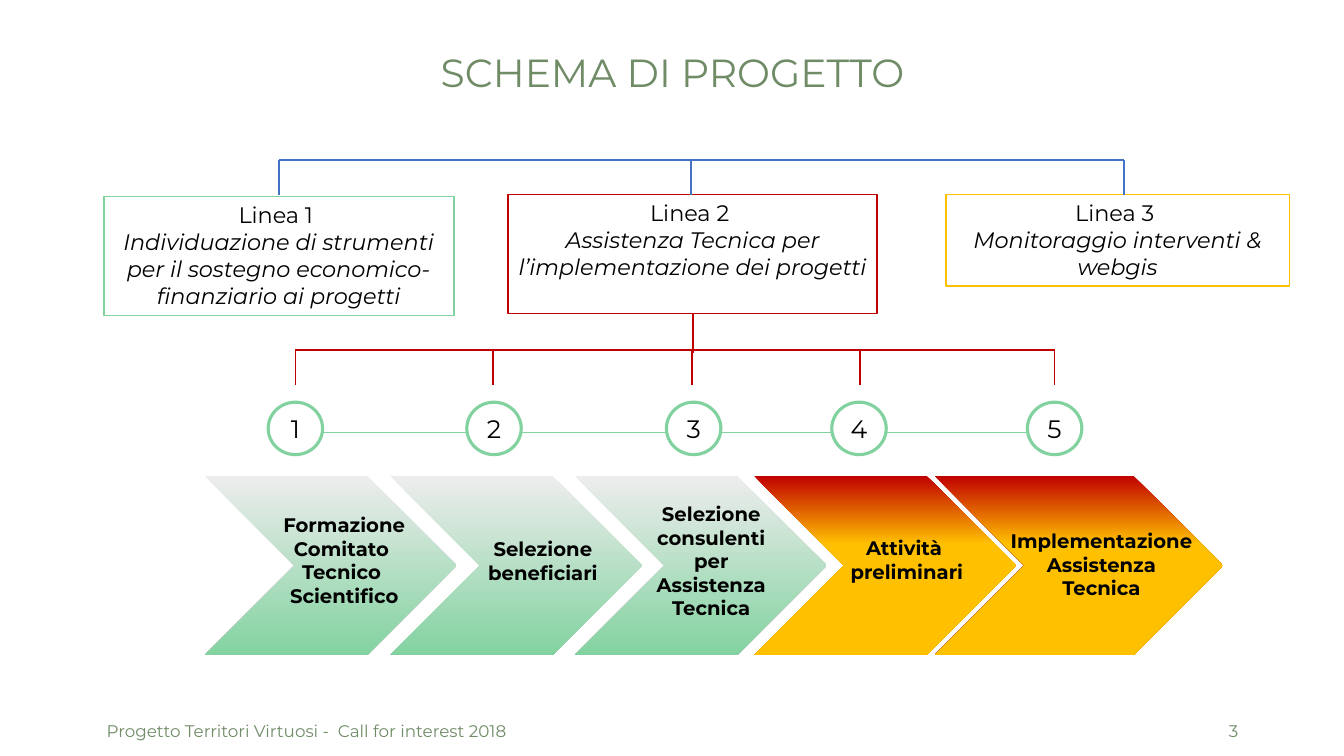
"""Build the project scheme slide: three lines of work and five stages."""
from dataclasses import dataclass

from lxml.etree import SubElement
from pptx import Presentation
from pptx.dml.color import RGBColor
from pptx.enum.shapes import MSO_CONNECTOR, MSO_SHAPE
from pptx.enum.text import MSO_ANCHOR, PP_ALIGN
from pptx.oxml.ns import qn
from pptx.shapes.autoshape import Shape
from pptx.slide import Slide
from pptx.util import Emu, Pt

EMU_PER_PX = 9144


@dataclass(frozen=True)
class Theme:
    """Colours, font and point sizes of the slide."""
    sage: str = "708C67"
    mint: str = "82D2A0"
    red: str = "C00000"
    amber: str = "FFC000"
    blue: str = "4472C4"
    grey: str = "EDEDED"
    white: str = "FFFFFF"
    black: str = "000000"
    font: str = "Montserrat"
    title_size: int = 28
    number_size: int = 18
    line_size: int = 16
    stage_size: int = 14
    footer_size: int = 12
    outline: float = 1.25
    thin: float = 1
    thick: float = 2.25


@dataclass(frozen=True)
class Box:
    """A rectangle in px."""
    left: int
    top: int
    width: int
    height: int

    def emu(self) -> tuple[Emu, Emu, Emu, Emu]:
        """Return the rectangle in EMU."""
        return px(self.left), px(self.top), px(self.width), px(self.height)


@dataclass(frozen=True)
class TextStyle:
    """How the text of one box is set."""
    size: int
    color: str
    align: PP_ALIGN = PP_ALIGN.CENTER
    bold: bool = False
    spacing: float = 1.0


@dataclass(frozen=True)
class WorkLine:
    """One of the framed lines of work."""
    box: Box
    color: str
    name: str
    description: str
    branch_x: int


@dataclass(frozen=True)
class Stage:
    """One numbered stage with its chevron and label."""
    circle_left: int
    branch_x: int
    chevron_left: int
    chevron_width: int
    gradient: tuple[tuple[float, str], ...]
    label: Box
    words: tuple[str, ...]


THEME = Theme()
GREEN_FADE = ((0, THEME.grey), (1, THEME.mint))
FIRE_FADE = ((0, THEME.red), (0.38, THEME.amber))

WORK_LINES = (
    WorkLine(Box(103, 195, 347, 118), THEME.mint, "Linea 1 ",
             "Individuazione di strumenti per il sostegno economico-finanziario ai progetti", 277),
    WorkLine(Box(504, 193, 366, 118), THEME.red, "Linea 2 ",
             "Assistenza Tecnica per l’implementazione dei progetti", 685),
    WorkLine(Box(938, 193, 341, 91), THEME.amber, "Linea 3 ",
             "Monitoraggio interventi & webgis", 1115),
)

STAGES = (
    Stage(266, 293, 203, 250, GREEN_FADE, Box(258, 504, 167, 104),
          ("Formazione", "Comitato ", "Tecnico ", "Scientifico")),
    Stage(463, 489, 387, 250, GREEN_FADE, Box(455, 528, 167, 57),
          ("Selezione", "beneficiari")),
    Stage(661, 686, 570, 250, GREEN_FADE, Box(612, 493, 187, 128),
          ("Selezione", "consulenti", "per", "Assistenza", "Tecnica")),
    Stage(825, 853, 748, 260, FIRE_FADE, Box(816, 527, 167, 57),
          ("Attività ", "preliminari")),
    Stage(1019, 1046, 927, 286, FIRE_FADE, Box(987, 520, 211, 81),
          ("Implementazione", "Assistenza", "Tecnica")),
)


def px(value: int) -> Emu:
    """Turn px into EMU."""
    return Emu(value * EMU_PER_PX)


def rgb(color: str) -> RGBColor:
    """Turn a hex string into a colour."""
    return RGBColor.from_string(color)


def write(shape: Shape, lines: tuple[str, ...], style: TextStyle,
          italic_after_first: bool = False) -> None:
    """Write one paragraph per line into a shape."""
    frame = shape.text_frame
    frame.word_wrap = True
    for index, line in enumerate(lines):
        paragraph = frame.add_paragraph() if index else frame.paragraphs[0]
        paragraph.alignment = style.align
        paragraph.line_spacing = style.spacing
        run = paragraph.add_run()
        run.text = line
        run.font.name = THEME.font
        run.font.size = Pt(style.size)
        run.font.bold = style.bold
        run.font.italic = italic_after_first and index > 0
        run.font.color.rgb = rgb(style.color)


def add_text(slide: Slide, box: Box, lines: tuple[str, ...], style: TextStyle) -> None:
    """Add a text box."""
    write(slide.shapes.add_textbox(*box.emu()), lines, style)


def add_outlined(slide: Slide, kind: MSO_SHAPE, box: Box, color: str, weight: float) -> Shape:
    """Add a preset shape with an outline and no fill."""
    shape = slide.shapes.add_shape(kind, *box.emu())
    shape.shadow.inherit = False
    shape.fill.background()
    shape.line.color.rgb = rgb(color)
    shape.line.width = Pt(weight)
    shape.text_frame.vertical_anchor = MSO_ANCHOR.TOP
    return shape


def add_line(slide: Slide, start: tuple[int, int], end: tuple[int, int],
             color: str, weight: float = THEME.outline) -> None:
    """Add a straight connector."""
    connector = slide.shapes.add_connector(
        MSO_CONNECTOR.STRAIGHT, px(start[0]), px(start[1]), px(end[0]), px(end[1]))
    connector.line.color.rgb = rgb(color)
    connector.line.width = Pt(weight)
    SubElement(connector._element.spPr, qn("a:effectLst"))


def add_tree(slide: Slide, branches: list[int], top: int, bottom: int, color: str) -> None:
    """Add a horizontal bar with a branch hanging at each place."""
    add_line(slide, (branches[0], top), (branches[-1], top), color)
    for branch in branches:
        add_line(slide, (branch, top), (branch, bottom), color)


def add_chevron(slide: Slide, stage: Stage) -> None:
    """Add the shaded chevron of a stage."""
    box = Box(stage.chevron_left, 472, stage.chevron_width, 178)
    chevron = slide.shapes.add_shape(MSO_SHAPE.CHEVRON, *box.emu())
    chevron.shadow.inherit = False
    chevron.line.fill.background()
    chevron.fill.gradient()
    chevron.fill.gradient_angle = 270
    for stop, (position, color) in zip(chevron.fill.gradient_stops, stage.gradient):
        stop.position = position
        stop.color.rgb = rgb(color)


def add_number(slide: Slide, stage: Stage, number: int) -> None:
    """Add the numbered circle of a stage."""
    circle = add_outlined(slide, MSO_SHAPE.OVAL, Box(stage.circle_left, 399, 54, 52),
                          THEME.mint, THEME.thick)
    circle.fill.solid()
    circle.fill.fore_color.rgb = rgb(THEME.white)
    circle.text_frame.vertical_anchor = MSO_ANCHOR.MIDDLE
    write(circle, (str(number),), TextStyle(THEME.number_size, THEME.black))


def main() -> None:
    """Build and save the slide."""
    presentation = Presentation()
    presentation.slide_width, presentation.slide_height = px(1333), px(750)
    slide = presentation.slides.add_slide(presentation.slide_layouts[6])

    add_text(slide, Box(96, 48, 1142, 106), ("SCHEMA DI PROGETTO",),
             TextStyle(THEME.title_size, THEME.sage, spacing=0.9))
    add_text(slide, Box(96, 710, 866, 40), ("Progetto Territori Virtuosi -  Call for interest 2018",),
             TextStyle(THEME.footer_size, THEME.sage, PP_ALIGN.LEFT))
    add_text(slide, Box(987, 710, 251, 40), ("3",),
             TextStyle(THEME.footer_size, THEME.sage, PP_ALIGN.RIGHT))

    for work in WORK_LINES:
        frame = add_outlined(slide, MSO_SHAPE.RECTANGLE, work.box, work.color, THEME.outline)
        write(frame, (work.name, work.description), TextStyle(THEME.line_size, THEME.black), True)
    add_tree(slide, [work.branch_x for work in WORK_LINES], 159, 193, THEME.blue)

    for stage in STAGES:
        add_chevron(slide, stage)
    for stage in STAGES:
        add_text(slide, stage.label, stage.words,
                 TextStyle(THEME.stage_size, THEME.black, bold=True))
    add_line(slide, (284, 429), (1052, 429), THEME.mint, THEME.thin)
    for number, stage in enumerate(STAGES, 1):
        add_number(slide, stage, number)
    add_line(slide, (687, 311), (687, 350), THEME.red)
    add_tree(slide, [stage.branch_x for stage in STAGES], 347, 382, THEME.red)

    presentation.save("out.pptx")


if __name__ == "__main__":
    main()
